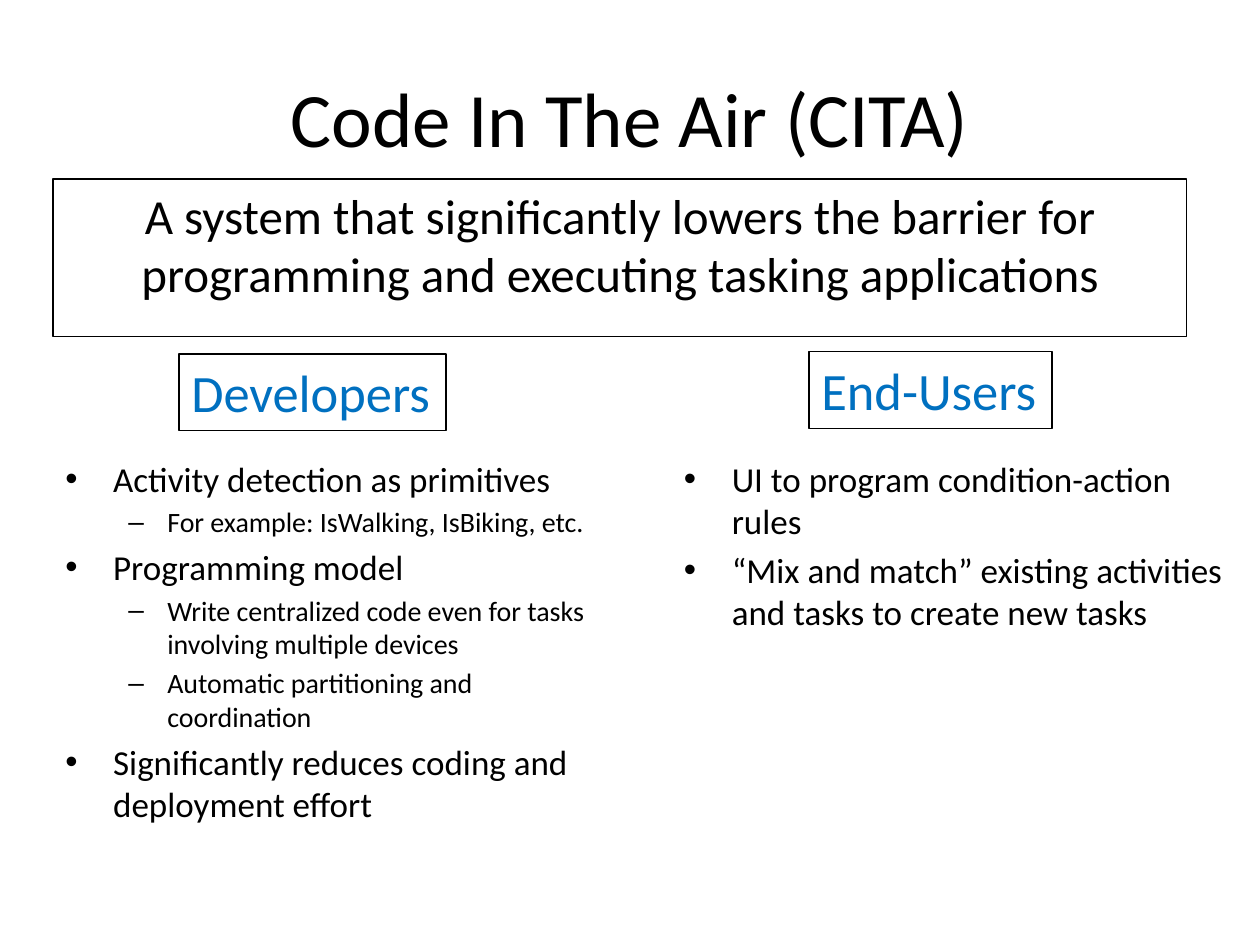
from lxml import etree
from pptx import Presentation
from pptx import util as u
from pptx.dml.color import RGBColor
from pptx.enum import text
from pptx.oxml.ns import qn

FONT, BLACK, BLUE = "Calibri", "000000", "0070C0"

# Content
TITLE = "Code In The Air (CITA)"
SUMMARY = ("A system that significantly lowers the barrier for "
           "programming and executing tasking applications")
LABELS = [
    ("Developers", (1.42, 2.81, 2.12, 0.61)),
    ("End-Users", (6.42, 2.79, 1.93, 0.61)),
]
# Each column: place, then (level, text)
COLUMNS = [
    ((0.42, 3.58, 4.5, 3.38), [
        (0, "Activity detection as primitives"),
        (1, "For example: IsWalking, IsBiking, etc."),
        (0, "Programming model"),
        (1, "Write centralized code even for tasks involving multiple devices"),
        (1, "Automatic partitioning and coordination"),
        (0, "Significantly reduces coding and deployment effort"),
    ]),
    ((5.33, 3.58, 4.5, 1.92), [
        (0, "UI to program condition-action rules"),
        (0, "“Mix and match” existing activities and tasks to create new tasks"),
    ]),
]
# Bullet, size, left margin and hanging indent of each level
LEVELS = [("•", 20, 0.38, 0.38), ("–", 16, 0.81, 0.31)]


def color(value):
    return RGBColor.from_string(value)


def add_box(page, place, outlined=False, wrap=True):
    box = page.shapes.add_textbox(*map(u.Inches, place))
    box.text_frame.word_wrap = wrap
    if outlined:
        box.line.color.rgb = color(BLACK)
        box.line.width = u.Pt(0.75)
    return box


def write(para, words, size, ink=BLACK, align=text.PP_ALIGN.LEFT):
    para.text = words
    para.alignment = align
    para.font.name = FONT
    para.font.size = u.Pt(size)
    para.font.color.rgb = color(ink)


def add_bullet(para, mark, margin, hang):
    props = para._p.get_or_add_pPr()
    props.set("marL", str(u.Inches(margin)))
    props.set("indent", str(-u.Inches(hang)))
    bullet_font = etree.Element(qn("a:buFont"), typeface="Arial")
    bullet = etree.Element(qn("a:buChar"), char=mark)
    # Bullets come before the default run properties
    defaults = props.find(qn("a:defRPr"))
    defaults.addprevious(bullet_font)
    defaults.addprevious(bullet)


deck = Presentation()
deck.slide_width, deck.slide_height = u.Inches(10), u.Inches(7.5)
page = deck.slides.add_slide(deck.slide_layouts[6])

# Title
box = add_box(page, (0.5, 0.3, 9, 1.25))
box.text_frame.vertical_anchor = text.MSO_ANCHOR.MIDDLE
write(box.text_frame.paragraphs[0], TITLE, 44, align=text.PP_ALIGN.CENTER)

# Framed summary
box = add_box(page, (0.42, 1.42, 9, 1.25), outlined=True)
para = box.text_frame.paragraphs[0]
write(para, SUMMARY, 28, align=text.PP_ALIGN.CENTER)
para.space_before = u.Pt(5.6)

# Column labels
for words, place in LABELS:
    box = add_box(page, place, outlined=True, wrap=False)
    box.text_frame.auto_size = text.MSO_AUTO_SIZE.SHAPE_TO_FIT_TEXT
    write(box.text_frame.paragraphs[0], words, 30, BLUE)

# Bulleted columns
for place, items in COLUMNS:
    frame = add_box(page, place).text_frame
    for number, (level, words) in enumerate(items):
        para = frame.add_paragraph() if number else frame.paragraphs[0]
        mark, size, margin, hang = LEVELS[level]
        write(para, words, size)
        para.level = level
        para.space_before = u.Pt(size * 0.2)
        add_bullet(para, mark, margin, hang)

deck.save("out.pptx")
